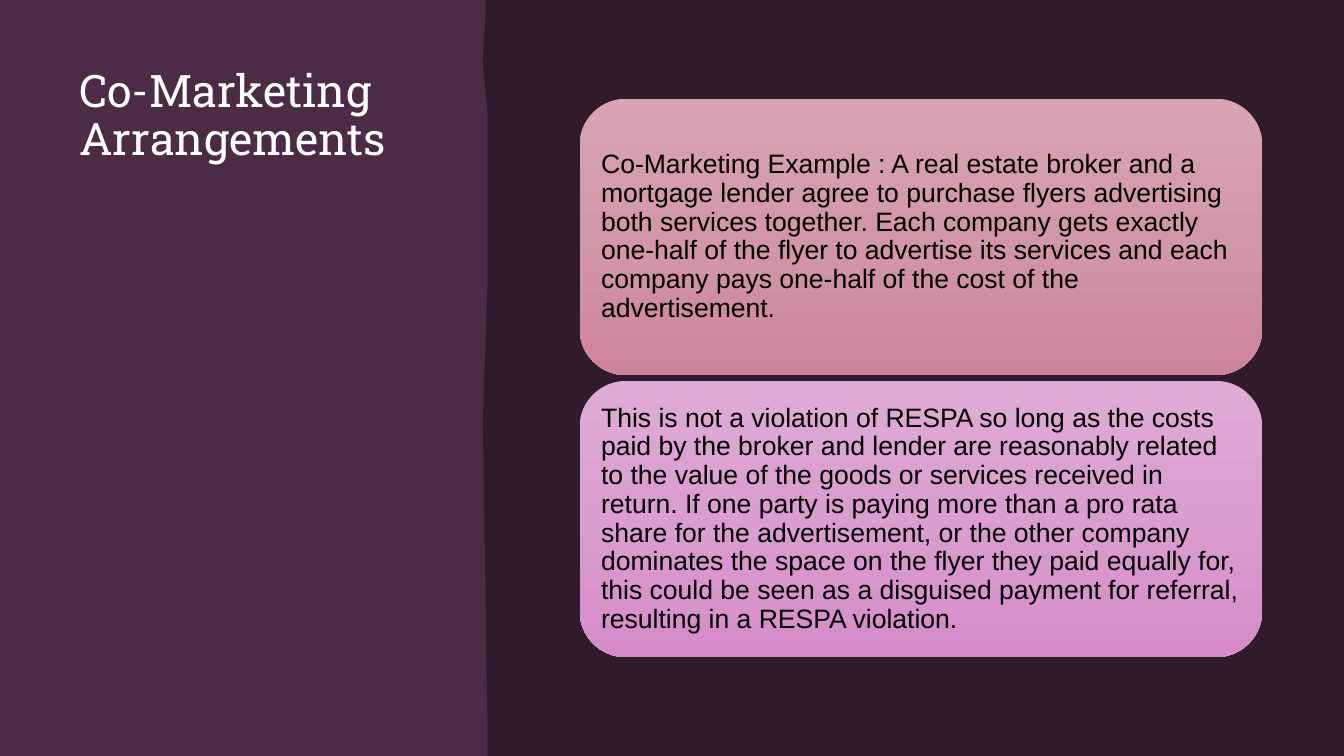
from dataclasses import dataclass

from lxml.etree import SubElement
from pptx import Presentation
from pptx.dml.color import RGBColor
from pptx.enum.shapes import MSO_SHAPE as Preset
from pptx.enum.text import MSO_ANCHOR as Anchor
from pptx.enum.text import MSO_AUTO_SIZE as AutoSize
from pptx.enum.text import PP_ALIGN as Align
from pptx.oxml.ns import qn
from pptx.util import Cm, Pt

PLUM = "4C2B47"
DARK = "301B2D"
WIDTH, HEIGHT = 33.87, 19.05
PANEL_LEFT, PANEL_TOP = 14.61, 2.49
PANEL_WIDTH, PANEL_HEIGHT, PANEL_STEP = 17.2, 6.96, 7.11

WAVY_EDGE = [
    (12.29, HEIGHT), (12.29, 18.52), (12.17, 10.59), (12.29, 7.14),
    (12.29, 3.0), (12.27, 2.6), (12.23, 2.22), (12.19, 1.87),
    (12.17, 1.52), (12.24, 0.28), (12.24, 0),
]


@dataclass
class Panel:
    text: str
    shades: tuple[str, str, str]


PANELS = [
    Panel(
        "Co-Marketing Example : A real estate broker and a mortgage lender agree "
        "to purchase flyers advertising both services together. Each company gets "
        "exactly one-half of the flyer to advertise its services and each company "
        "pays one-half of the cost of the advertisement.",
        ("DAA3B5", "D196AA", "CE839C"),
    ),
    Panel(
        "This is not a violation of RESPA so long as the costs paid by the broker "
        "and lender are reasonably related to the value of the goods or services "
        "received in return. If one party is paying more than a pro rata share for "
        "the advertisement, or the other company dominates the space on the flyer "
        "they paid equally for, this could be seen as a disguised payment for "
        "referral, resulting in a RESPA violation.",
        ("DFABD6", "D99DCF", "D68CCA"),
    ),
]


def paint(fill, colour: str) -> None:
    fill.solid()
    fill.fore_color.rgb = RGBColor.from_string(colour)


def make_plain(shape) -> None:
    shape.shadow.inherit = False
    shape.line.fill.background()


def write(shape, text: str, font_name: str, size: int, colour: str,
          anchor: Anchor, inset: float) -> None:
    frame = shape.text_frame
    frame.text = text
    margin = Cm(inset)
    frame_format = {
        "word_wrap": True, "auto_size": AutoSize.NONE, "vertical_anchor": anchor,
        "margin_left": margin, "margin_top": margin,
        "margin_right": margin, "margin_bottom": margin,
    }
    for name, value in frame_format.items():
        setattr(frame, name, value)
    para = frame.paragraphs[0]
    para.alignment = Align.LEFT
    para.line_spacing = 0.9
    span = para.runs[0]
    for name, value in {"name": font_name, "size": Pt(size)}.items():
        setattr(span.font, name, value)
    paint(span.font.fill, colour)


def shade_down(shape, shades: tuple[str, str, str]) -> None:
    shape.fill.gradient()
    gradient = shape._element.spPr.find(qn("a:gradFill"))
    for child in list(gradient):
        gradient.remove(child)
    stops = SubElement(gradient, qn("a:gsLst"))
    for index, shade in enumerate(shades):
        stop = SubElement(stops, qn("a:gs"), pos=str(index * 50000))
        SubElement(stop, qn("a:srgbClr"), val=shade)
    SubElement(gradient, qn("a:lin"), ang="5400000", scaled="0")


def draw_background(page) -> None:
    paint(page.background.fill, DARK)
    backdrop = page.shapes.add_shape(Preset.RECTANGLE, 0, 0, Cm(WIDTH), Cm(HEIGHT))
    paint(backdrop.fill, PLUM)
    make_plain(backdrop)
    page.shapes._spTree.insert(2, backdrop._element)

    outline = page.shapes.build_freeform(Cm(WIDTH), 0, scale=1.0)
    corner_and_edge = [(WIDTH, HEIGHT), *WAVY_EDGE]
    outline.add_line_segments([(Cm(x), Cm(y)) for x, y in corner_and_edge], close=True)
    dark_side = outline.convert_to_shape()
    paint(dark_side.fill, DARK)
    make_plain(dark_side)


def draw_title(page) -> None:
    title = page.shapes.title
    place = {"left": 2.0, "top": 1.73, "width": 8.64, "height": 15.32}
    for name, value in place.items():
        setattr(title, name, Cm(value))
    write(title, "Co-Marketing Arrangements", "Roboto Slab", 32, "FFFFFF", Anchor.TOP, 0)


def draw_panel(page, panel: Panel, index: int) -> None:
    box = page.shapes.add_shape(
        Preset.ROUNDED_RECTANGLE, Cm(PANEL_LEFT), Cm(PANEL_TOP + index * PANEL_STEP),
        Cm(PANEL_WIDTH), Cm(PANEL_HEIGHT))
    make_plain(box)
    shade_down(box, panel.shades)
    write(box, panel.text, "Arial", 19, "000000", Anchor.MIDDLE, 0.2)


def main() -> None:
    deck = Presentation()
    deck.slide_width, deck.slide_height = Cm(WIDTH), Cm(HEIGHT)
    page = deck.slides.add_slide(deck.slide_layouts.get_by_name("Title Only"))
    draw_background(page)
    draw_title(page)
    for index, panel in enumerate(PANELS):
        draw_panel(page, panel, index)
    deck.save("out.pptx")


if __name__ == "__main__":
    main()
